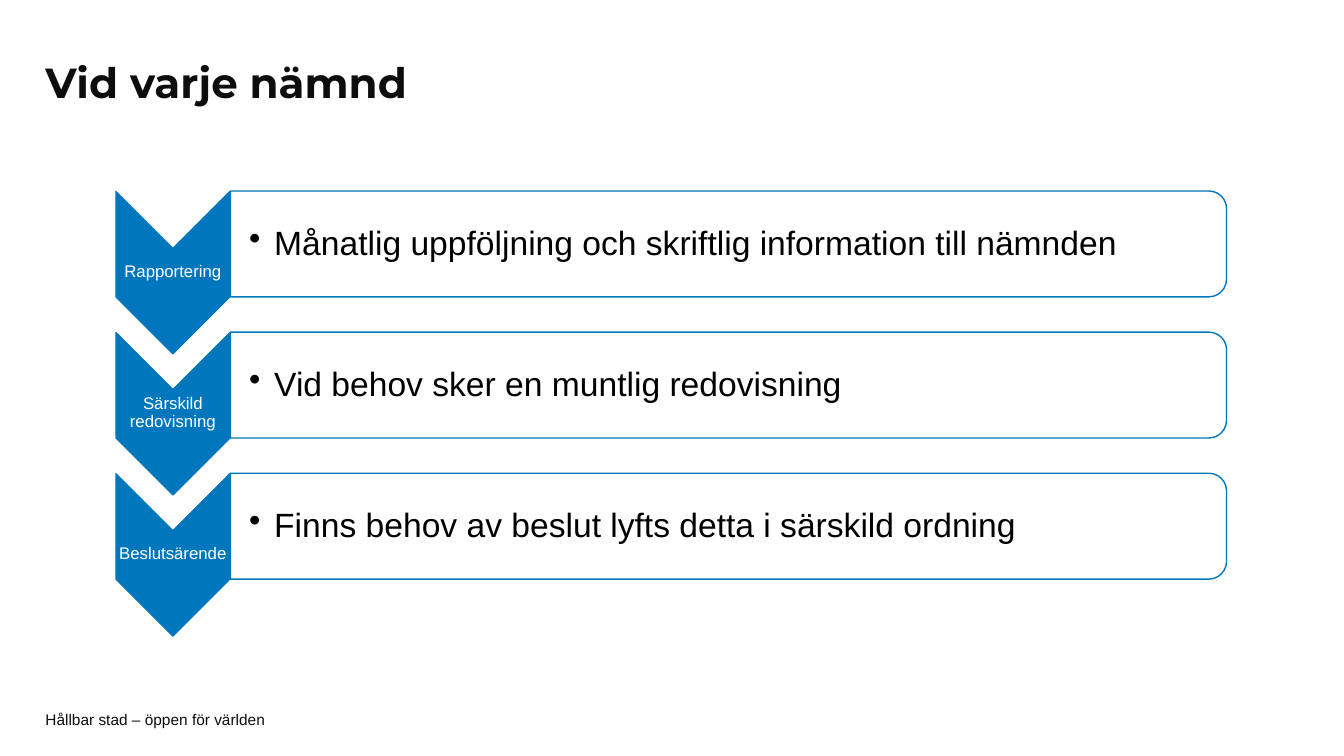
"""Builds the slide on what happens at every committee meeting."""
import pptx
import pptx.util
import pptx.dml.color
import pptx.enum.shapes
import pptx.enum.text
import pptx.oxml.ns
from lxml import etree

Inches = pptx.util.Inches
Pt = pptx.util.Pt
Kind = pptx.enum.shapes.MSO_SHAPE
Align = pptx.enum.text.PP_ALIGN
qn = pptx.oxml.ns.qn
BLUE = "0077BC"


def color(code):
    return pptx.dml.color.RGBColor.from_string(code)


def write(box, text, look, ins, align=Align.LEFT, space=0.9, bullet=False):
    frame = box.text_frame
    frame.word_wrap = True
    frame.auto_size = pptx.enum.text.MSO_AUTO_SIZE.NONE
    frame.vertical_anchor = pptx.enum.text.MSO_ANCHOR.MIDDLE
    for side, gap in zip(("left", "top", "right", "bottom"), ins):
        setattr(frame, "margin_" + side, Inches(gap))
    frame.text = text
    para = frame.paragraphs[0]
    para.alignment = align
    para.line_spacing = space
    if bullet:
        props = para._p.get_or_add_pPr()
        props.set("marL", str(Inches(0.25)))
        props.set("indent", str(-Inches(0.25)))
        etree.SubElement(props, qn("a:buChar"), char="•")
    font = para.runs[0].font
    for key, value in look.items():
        if key == "color":
            font.color.rgb = color(value)
        else:
            setattr(font, key, value)


looks = {
    "title": {"name": "Montserrat", "size": Pt(30), "bold": True, "color": "0D0D0D"},
    "foot": {"name": "Arial", "size": Pt(11), "color": "0D0D0D"},
    "label": {"name": "Arial", "size": Pt(12), "color": "FFFFFF"},
    "item": {"name": "Arial", "size": Pt(24), "color": "000000"},
}
steps = [
    ("Rapportering", "Månatlig uppföljning och skriftlig information till nämnden"),
    ("Särskild redovisning", "Vid behov sker en muntlig redovisning"),
    ("Beslutsärende", "Finns behov av beslut lyfts detta i särskild ordning"),
]

deck = pptx.Presentation()
deck.slide_width = Inches(13.33)
deck.slide_height = Inches(7.5)
slide = deck.slides.add_slide(deck.slide_layouts[5])
shapes = slide.shapes

title = shapes.title
place = {"left": 0.45, "top": 0.44, "width": 10.03, "height": 0.81}
for key, value in place.items():
    setattr(title, key, Inches(value))
write(title, "Vid varje nämnd", looks["title"], (0, 0.05, 0, 0.05))

foot = shapes.add_textbox(Inches(0.45), Inches(7.06), Inches(9.45), Inches(0.16))
write(foot, "Hållbar stad – öppen för världen", looks["foot"], (0, 0, 0, 0), space=1.0)

for row, (name, item) in enumerate(steps):
    top = 1.9 + 1.4 * row
    parts = [
        (Kind.CHEVRON, 0.91, top + 0.24, 1.61, 1.13, BLUE),
        (Kind.ROUND_2_SAME_RECTANGLE, 6.7, top - 4.42, 1.05, 9.88, "FFFFFF"),
    ]
    for kind, left, y, wide, high, fill in parts:
        shape = shapes.add_shape(kind, Inches(left), Inches(y), Inches(wide), Inches(high))
        shape.rotation = 90
        shape.shadow.inherit = False
        shape.fill.solid()
        shape.fill.fore_color.rgb = color(fill)
        shape.line.color.rgb = color(BLUE)
        shape.line.width = Pt(1)
    tone = shape.fill._xPr.find(qn("a:solidFill"))[0]
    etree.SubElement(tone, qn("a:alpha"), val="90000")

    label = shapes.add_textbox(Inches(1.15), Inches(top + 0.56), Inches(1.13), Inches(0.48))
    write(label, name, looks["label"], (0.01,) * 4, Align.CENTER)
    body = shapes.add_textbox(Inches(2.28), Inches(top + 0.05), Inches(9.83), Inches(0.95))
    write(body, item, looks["item"], (0.19, 0.02, 0.02, 0.02), bullet=True)

deck.save("out.pptx")
